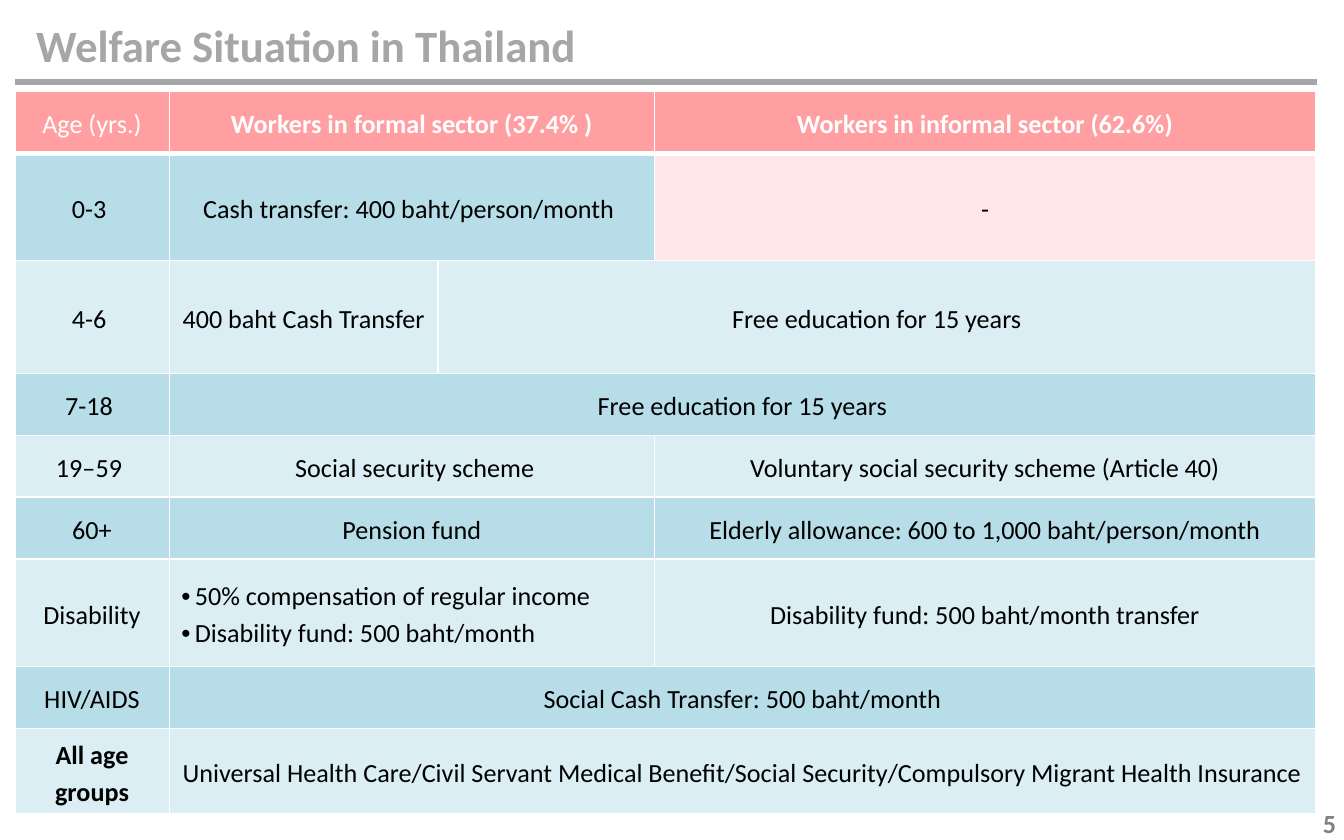
from lxml import etree
from pptx import Presentation
from pptx.dml.color import RGBColor
from pptx.enum.shapes import MSO_CONNECTOR
from pptx.enum.text import MSO_ANCHOR, PP_ALIGN
from pptx.oxml.ns import qn
from pptx.util import Inches, Pt

LEFT, CENTER, RIGHT = PP_ALIGN.LEFT, PP_ALIGN.CENTER, PP_ALIGN.RIGHT
MIDDLE = MSO_ANCHOR.MIDDLE
LINE = MSO_CONNECTOR.STRAIGHT

FONT = "Calibri"
WHITE, BLACK, GRAY, DARK = "FFFFFF", "000000", "A6A6A6", "808080"
HEAD, ROSE = "FF9FA1", "FFE7E8"
BANDS = ["DAEEF3", "B6DDE8"]

TITLE = "Welfare Situation in Thailand"
PAGE = "5"
COLS = [1.15, 2, 1.61, 4.92]
FREE = "Free education for 15 years"

# Each row: height, then cells as (text, columns spanned); a list is bulleted
ROWS = [
    (0.46, [("Age (yrs.)", 1), ("Workers in formal sector (37.4% )", 2),
            ("Workers in informal sector (62.6%)", 1)]),
    (0.8, [("0-3 ", 1), ("Cash transfer: 400 baht/person/month ", 2), ("-", 1)]),
    (0.84, [("4-6 ", 1), ("400 baht Cash Transfer", 1), (FREE, 2)]),
    (0.46, [("7-18 ", 1), (FREE, 3)]),
    (0.46, [("19–59 ", 1), (" Social security scheme", 2),
            ("Voluntary social security scheme (Article 40)", 1)]),
    (0.46, [("60+", 1), ("Pension fund", 2),
            ("Elderly allowance: 600 to 1,000 baht/person/month", 1)]),
    (0.8, [("Disability", 1),
           (["50% compensation of regular income",
             "Disability fund: 500 baht/month"], 2),
           ("Disability fund: 500 baht/month transfer", 1)]),
    (0.46, [("HIV/AIDS", 1), ("Social Cash Transfer: 500 baht/month", 3)]),
    (0.63, [("All age groups", 1),
            ("Universal Health Care/Civil Servant Medical Benefit/"
             "Social Security/Compulsory Migrant Health Insurance", 3)]),
]
BOLD = {ROWS[0][1][1][0], ROWS[0][1][2][0], "All age groups"}


def rgb(code):
    return RGBColor.from_string(code)


def write(frame, text, size=14, color=BLACK, bold=False, align=LEFT, space=1.0):
    """Fill a text frame; a list of lines becomes bullets."""
    frame.word_wrap = True
    listed = isinstance(text, list)
    for i, line in enumerate(text if listed else [text]):
        para = frame.add_paragraph() if i else frame.paragraphs[0]
        para.alignment = LEFT if listed else align
        para.line_spacing = space
        if listed:
            props = para._p.get_or_add_pPr()
            props.set("marL", str(Inches(0.1)))
            props.set("indent", str(-Inches(0.1)))
            etree.SubElement(props, qn("a:buFont"), typeface="Arial")
            etree.SubElement(props, qn("a:buChar"), char="•")
        run = para.add_run()
        run.text = line
        font = run.font
        font.name, font.size, font.bold = FONT, Pt(size), bold
        font.color.rgb = rgb(color)


def add_text(slide, text, box, **style):
    frame = slide.shapes.add_textbox(*map(Inches, box)).text_frame
    write(frame, text, **style)


def border(cell, **widths):
    """Draw white edges; widths in points are keyed L, R, T and B."""
    props = cell._tc.get_or_add_tcPr()
    for side, width in widths.items():
        edge = etree.SubElement(props, qn("a:ln" + side), w=str(Pt(width)))
        fill = etree.SubElement(edge, qn("a:solidFill"))
        etree.SubElement(fill, qn("a:srgbClr"), val=WHITE)


def paint(cell, color):
    cell.fill.solid()
    cell.fill.fore_color.rgb = rgb(color)


def add_grid(slide):
    high = sum(row[0] for row in ROWS)
    table = slide.shapes.add_table(
        len(ROWS), len(COLS), Inches(0.11), Inches(0.68),
        Inches(sum(COLS)), Inches(high)).table
    table.first_row = table.horz_banding = False
    for col, width in zip(table.columns, COLS):
        col.width = Inches(width)
    for r, (height, cells) in enumerate(ROWS):
        table.rows[r].height = Inches(height)
        for c in range(len(COLS)):
            cell = table.cell(r, c)
            border(cell, L=1, R=1, T=3 if r == 1 else 1, B=3 if r == 0 else 1)
            paint(cell, BANDS[r % 2] if r else HEAD)
        c = 0
        for text, span in cells:
            cell = table.cell(r, c)
            if span > 1:
                cell.merge(table.cell(r, c + span - 1))
            if text == "-":
                paint(cell, ROSE)
            cell.vertical_anchor = MIDDLE
            cell.margin_left = cell.margin_right = Inches(0.09)
            cell.margin_top = cell.margin_bottom = Inches(0.05)
            write(cell.text_frame, text, color=BLACK if r else WHITE,
                  bold=not isinstance(text, list) and text in BOLD,
                  align=CENTER, space=1.15)
            c += span


def add_rule(slide):
    rule = slide.shapes.add_connector(
        LINE, Inches(0.11), Inches(0.61), Inches(9.8), Inches(0.61))
    rule.line.color.rgb = rgb(GRAY)
    rule.line.width = Pt(3)
    etree.SubElement(rule._element.spPr, qn("a:effectLst"))


def main():
    deck = Presentation()
    deck.slide_width, deck.slide_height = Inches(10), Inches(6.25)
    slide = deck.slides.add_slide(deck.slide_layouts[6])
    add_text(slide, PAGE, (8.23, 5.96, 1.81, 0.34),
             color=DARK, bold=True, align=RIGHT)
    add_text(slide, TITLE, (0.17, 0.13, 9.83, 0.47),
             size=24, color=GRAY, bold=True, space=0.9)
    add_rule(slide)
    add_grid(slide)
    deck.save("out.pptx")


if __name__ == "__main__":
    main()
